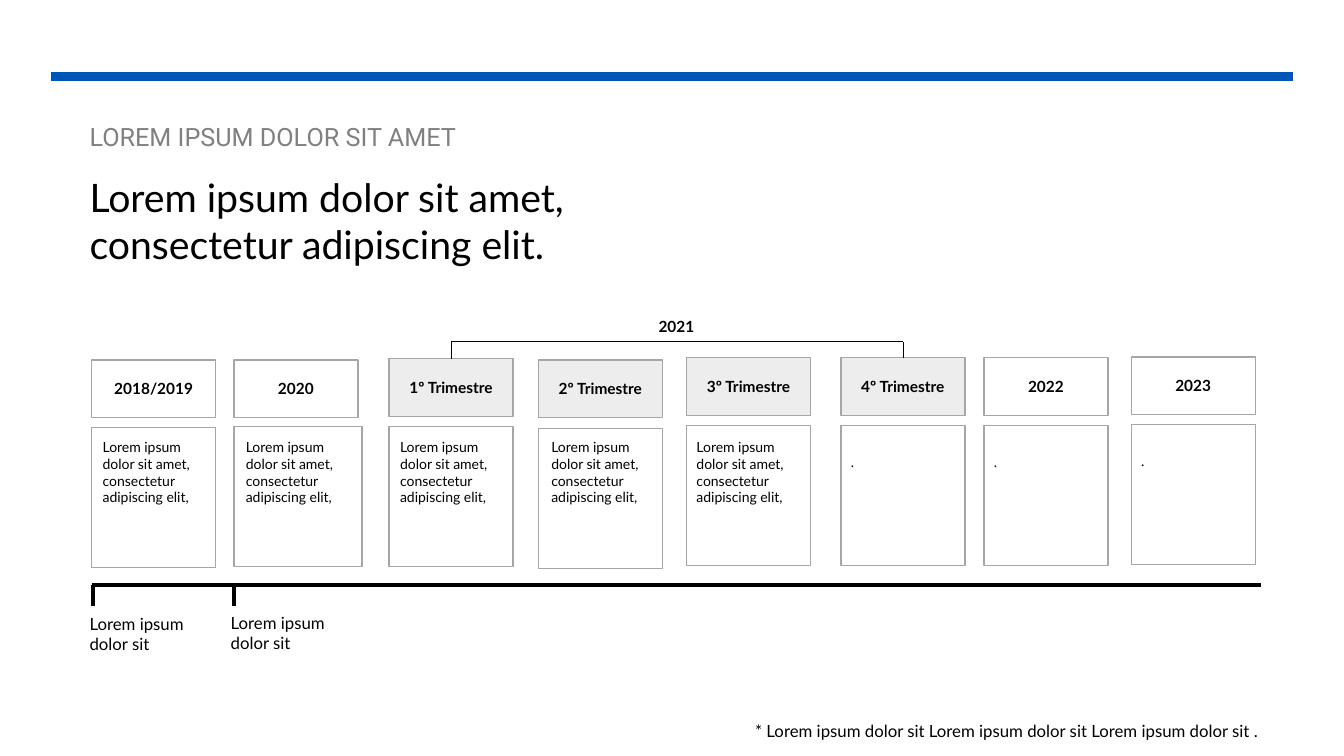
"""Build a timeline slide with period headers, note boxes and a 2021 bracket."""
from dataclasses import dataclass

from lxml.etree import SubElement
from pptx import Presentation
from pptx.dml.color import RGBColor
from pptx.enum.shapes import MSO_CONNECTOR, MSO_SHAPE
from pptx.enum.text import MSO_ANCHOR, PP_ALIGN
from pptx.oxml.ns import qn
from pptx.util import Inches, Pt

COLORS = {"blue": "0055B8", "black": "000000", "gray": "808080",
          "border": "A6A6A6", "shade": "EDEDED"}
LOREM = "Lorem ipsum dolor sit amet, consectetur adipiscing elit"
BOX_W, HEAD_H, BODY_H = 1.23, 0.57, 1.39
AXIS_Y, BRACKET_Y = 5.8, 3.39


@dataclass
class Period:
    label: str
    left: float
    head_top: float
    body_top: float
    note: str
    note_left: float
    note_top: float = 4.3
    shaded: bool = False
    body_w: float = BOX_W


@dataclass
class Label:
    text: str
    left: float
    top: float
    width: float
    height: float
    size: float
    color: str = "black"
    font: str = "Lato"
    bold: bool = False
    align: PP_ALIGN = PP_ALIGN.LEFT


PERIODS = [
    Period("2018/2019", 0.91, 3.57, 4.24, LOREM + ",", 0.92),
    Period("2020", 2.32, 3.57, 4.23, LOREM + ",", 2.34, body_w=1.27),
    Period("1º Trimestre", 3.86, 3.56, 4.23, LOREM + ",", 3.87, shaded=True),
    Period("2º Trimestre", 5.34, 3.57, 4.25, LOREM + ",", 5.37, shaded=True),
    Period("3º Trimestre", 6.81, 3.55, 4.22, LOREM + ",", 6.81, shaded=True),
    Period("4º Trimestre", 8.34, 3.55, 4.22, ".", 8.34, 4.45, shaded=True),
    Period("2022", 9.76, 3.55, 4.22, ".", 9.76, 4.45),
    Period("2023", 11.22, 3.54, 4.21, ".", 11.22, 4.44),
]
LABELS = [
    Label("LOREM IPSUM DOLOR SIT AMET", 0.79, 1.15, 5.87, 0.4, 18, "gray", "Roboto"),
    Label(LOREM + ".", 0.79, 1.67, 6.15, 1.04, 28),
    Label("2021", 6.31, 3.1, 0.8, 0.29, 11, bold=True, align=PP_ALIGN.CENTER),
    Label("Lorem ipsum dolor sit", 0.79, 6.04, 1.23, 0.5, 12),
    Label("Lorem ipsum dolor sit", 2.19, 6.03, 1.23, 0.5, 12),
    Label("* Lorem ipsum dolor sit Lorem ipsum dolor sit Lorem ipsum dolor sit .",
          6.94, 7.1, 5.64, 0.3, 12, align=PP_ALIGN.RIGHT),
]


def rgb(name: str) -> RGBColor:
    return RGBColor.from_string(COLORS[name])


def write(tf, text: str, *, size: float, color: str = "black", font: str = "Lato",
          bold: bool = False, align: PP_ALIGN = PP_ALIGN.LEFT) -> None:
    tf.word_wrap = True
    p = tf.paragraphs[0]
    p.alignment = align
    r = p.add_run()
    r.text = text
    r.font.name = font
    r.font.size = Pt(size)
    r.font.bold = bold
    r.font.color.rgb = rgb(color)


def add_label(slide, label: Label) -> None:
    sp = slide.shapes.add_textbox(Inches(label.left), Inches(label.top),
                                  Inches(label.width), Inches(label.height))
    write(sp.text_frame, label.text, size=label.size, color=label.color,
          font=label.font, bold=label.bold, align=label.align)


def add_line(slide, x1: float, y1: float, x2: float, y2: float,
             width: float, color: str = "black"):
    cxn = slide.shapes.add_connector(MSO_CONNECTOR.STRAIGHT, Inches(x1), Inches(y1),
                                     Inches(x2), Inches(y2))
    cxn.line.width = Pt(width)
    cxn.line.color.rgb = rgb(color)
    SubElement(cxn._element.spPr, qn("a:effectLst"))
    return cxn


def add_box(slide, kind: MSO_SHAPE, left: float, top: float, width: float,
            height: float, shaded: bool = False):
    sp = slide.shapes.add_shape(kind, Inches(left), Inches(top),
                                Inches(width), Inches(height))
    sp.shadow.inherit = False
    if shaded:
        sp.fill.solid()
        sp.fill.fore_color.rgb = rgb("shade")
    else:
        sp.fill.background()
    sp.line.color.rgb = rgb("border")
    sp.line.width = Pt(1)
    return sp


def add_period(slide, period: Period):
    add_box(slide, MSO_SHAPE.RECTANGLE, period.left, period.body_top,
            period.body_w, BODY_H)
    head = add_box(slide, MSO_SHAPE.ROUNDED_RECTANGLE, period.left, period.head_top,
                   BOX_W, HEAD_H, period.shaded)
    head.adjustments[0] = 0
    head.text_frame.vertical_anchor = MSO_ANCHOR.MIDDLE
    write(head.text_frame, period.label, size=11, bold=True, align=PP_ALIGN.CENTER)
    note_h = 0.27 if period.note == "." else 0.77
    add_label(slide, Label(period.note, period.note_left, period.note_top,
                           BOX_W, note_h, 10))
    return head


def add_bracket(slide, first, last) -> None:
    ends = [(head.left + head.width // 2) / Inches(1) for head in (first, last)]
    for head, x in zip((first, last), ends):
        side = add_line(slide, x, head.top / Inches(1), x, BRACKET_Y, 0.5)
        side.begin_connect(head, 0)
    add_line(slide, ends[0], BRACKET_Y, ends[1], BRACKET_Y, 0.5)


def main() -> None:
    prs = Presentation()
    prs.slide_width, prs.slide_height = Inches(13.33), Inches(7.5)
    slide = prs.slides.add_slide(prs.slide_layouts[6])
    add_line(slide, 0.51, 0.76, 12.82, 0.76, 6, "blue")
    add_line(slide, 0.91, AXIS_Y, 12.51, AXIS_Y, 3)
    for x in (0.92, 2.32):
        add_line(slide, x, AXIS_Y, x, 6.01, 3)
    heads = {period.label: add_period(slide, period) for period in PERIODS}
    add_bracket(slide, heads["1º Trimestre"], heads["4º Trimestre"])
    for label in LABELS:
        add_label(slide, label)
    prs.save("out.pptx")


if __name__ == "__main__":
    main()
